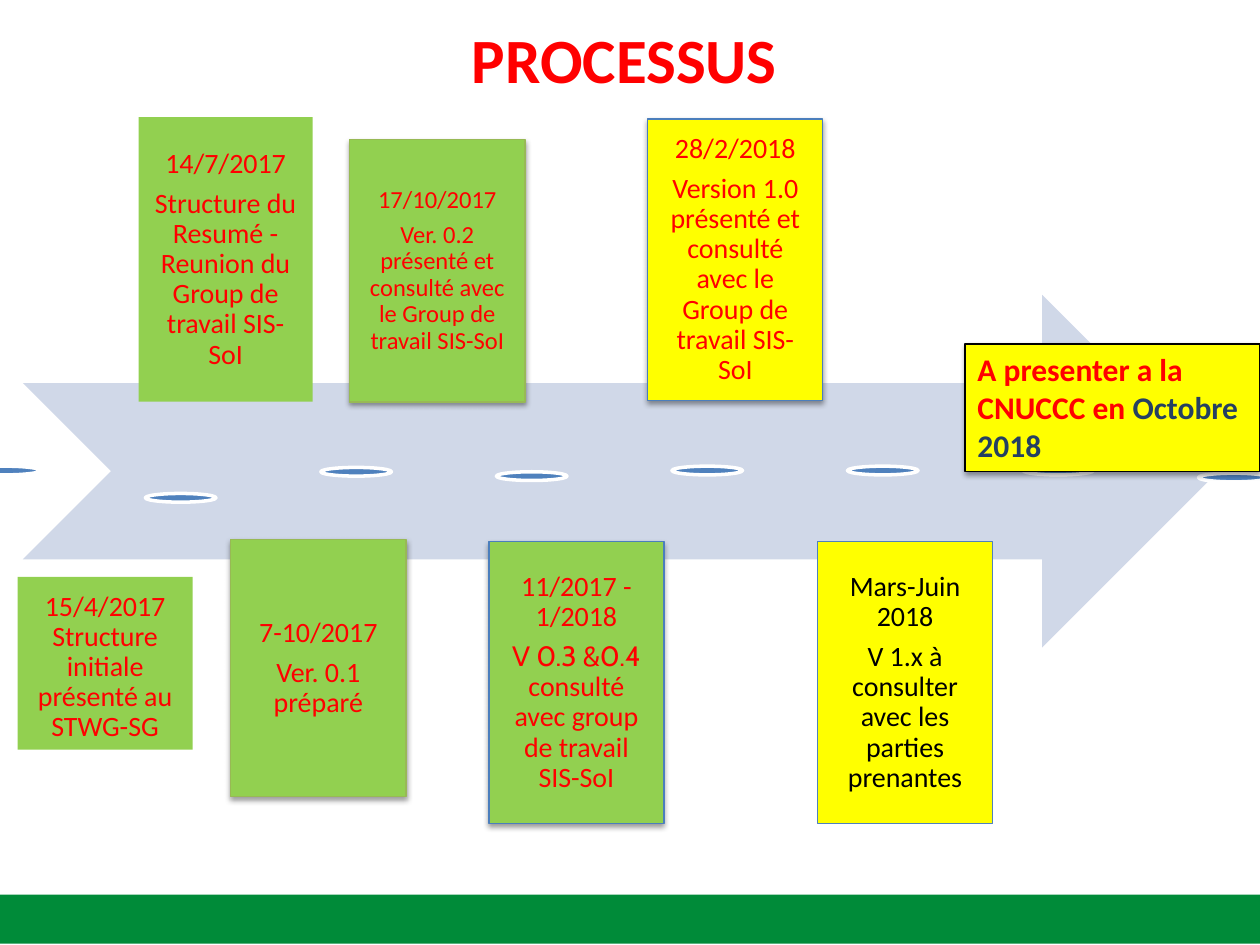
from lxml import etree
from pptx import Presentation
from pptx.dml.color import RGBColor
from pptx.enum import shapes as sh, text as tx
from pptx.oxml import ns
from pptx.util import Pt

COL = {"red": "FF0000", "green": "92D050", "yellow": "FFFF00", "black": "000000",
       "white": "FFFFFF", "blue": "4F81BD", "edge": "4B7EBC", "olive": "98B955",
       "pale": "D0D8E8", "navy": "254061", "band": "008B39"}
KIND = sh.MSO_SHAPE
MID, TOP = tx.MSO_ANCHOR.MIDDLE, tx.MSO_ANCHOR.TOP
MAIN, ALT = "Calibri", "Cabin"

# Content: each step has its place, its look and its paragraphs
STEPS = [
    dict(at=(10.1, 329.6, 100, 98.8), fill="green", anchor=TOP,
         paras=["15/4/2017 Structure initiale présenté au STWG-SG"]),
    dict(at=(79.2, 67, 99.4, 162.6), fill="green",
         paras=["14/7/2017", "Structure du Resumé - Reunion du Group de travail SIS-SoI"]),
    dict(at=(199.8, 79.8, 100.2, 150), fill="green", line="olive", shade=True, size=14, pad=7.9,
         paras=["17/10/2017",
                "Ver. 0.2 présenté et consulté avec le Group de travail SIS-SoI"]),
    dict(at=(279.4, 309.6, 100, 161), fill="green", line="edge", shade=True,
         paras=["11/2017 - 1/2018",
                [("V 0.3 &0.4 ", {"font": ALT}), ("consulté avec group de travail SIS-SoI", {})]]),
    dict(at=(370.2, 68, 100, 161), fill="yellow", line="edge", shade=True,
         paras=["28/2/2018",
                "Version 1.0 présenté et consulté avec le Group de travail SIS-SoI"]),
    dict(at=(467.2, 309.6, 100, 161), fill="yellow", line="blue", color="black",
         paras=["Mars-Juin 2018", "V 1.x à consulter avec les parties prenantes"]),
    dict(at=(131.8, 308.4, 100.2, 146.8), fill="green", line="olive", shade=True,
         paras=["7-10/2017", "Ver. 0.1 préparé"]),
]
GOAL = [[("A presenter a la CNUCCC en ", {}), ("Octobre 2018", {"color": "navy"})]]
DOTS = [266.4, 282, 267.1, 269.6, 266.4, 266.4, 266.4, 270.4]  # tops
DOT_X, DOT_STEP = -17.2, 100.3


def rgb(name):
    return RGBColor.from_string(COL[name])


def write(shape, paras, size=16, color="red", font=MAIN, bold=False, pad=None,
          align=tx.PP_ALIGN.CENTER, anchor=MID, space=None, after=0):
    frame = shape.text_frame
    frame.word_wrap = True
    frame.vertical_anchor = anchor
    if pad is not None:
        frame.margin_left = frame.margin_right = Pt(pad)
        frame.margin_top = frame.margin_bottom = Pt(pad)
    for i, item in enumerate(paras):
        para = frame.paragraphs[0] if i == 0 else frame.add_paragraph()
        para.alignment = align
        para.space_before, para.space_after = Pt(0), Pt(after)
        if space:
            para.line_spacing = space
        for words, own in [(item, {})] if isinstance(item, str) else item:
            run = para.add_run()
            run.text = words
            run.font.size, run.font.bold = Pt(size), bold
            run.font.name = own.get("font", font)
            run.font.color.rgb = rgb(own.get("color", color))


def draw(kind, at, fill, line=None, width=0.75, shade=False):
    shape = slide.shapes.add_shape(kind, *map(Pt, at))
    shape.shadow.inherit = False
    shape.fill.solid()
    shape.fill.fore_color.rgb = rgb(fill)
    if line:
        shape.line.color.rgb = rgb(line)
        shape.line.width = Pt(width)
    else:
        shape.line.fill.background()
    if shade:
        cast(shape)
    return shape


def cast(shape):
    """Soft shadow straight below the shape."""
    effect = shape._element.spPr.find(ns.qn("a:effectLst"))
    outer = etree.SubElement(effect, ns.qn("a:outerShdw"), blurRad=str(Pt(3.1)),
                             dist=str(Pt(1.6)), dir="5400000", rotWithShape="0")
    tint = etree.SubElement(outer, ns.qn("a:srgbClr"), val=COL["black"])
    etree.SubElement(tint, ns.qn("a:alpha"), val="38000")


deck = Presentation()
deck.slide_width, deck.slide_height = Pt(720), Pt(540)
slide = deck.slides.add_slide(deck.slide_layouts[5])

# Footer band and title
draw(KIND.RECTANGLE, (0, 511.2, 720, 28.1), "band")
title = slide.shapes.title
title.left, title.top, title.width, title.height = map(Pt, (23.8, -2.2, 666, 70.6))
write(title, ["PROCESSUS"], size=36, bold=True)

# Timeline arrow with its markers
draw(KIND.NOTCHED_RIGHT_ARROW, (13, 168.5, 683.3, 201.6), "pale")
for i, top in enumerate(DOTS):
    draw(KIND.OVAL, (DOT_X + i * DOT_STEP, top, 40.3, 5), "blue", "white", 2)

# Steps
for step in STEPS:
    box = draw(KIND.RECTANGLE, step["at"], step["fill"], step.get("line"),
               shade=step.get("shade", False))
    size = step.get("size", 16)
    write(box, step["paras"], size=size, color=step.get("color", "red"),
          pad=step.get("pad", 8.6), anchor=step.get("anchor", MID),
          space=0.9, after=round(size * 0.35, 1))

# Goal
goal = draw(KIND.RECTANGLE, (551.5, 196.6, 168.5, 72.7), "yellow", "black", shade=True)
write(goal, GOAL, size=18, bold=True, align=tx.PP_ALIGN.LEFT, anchor=TOP)

deck.save("out.pptx")
